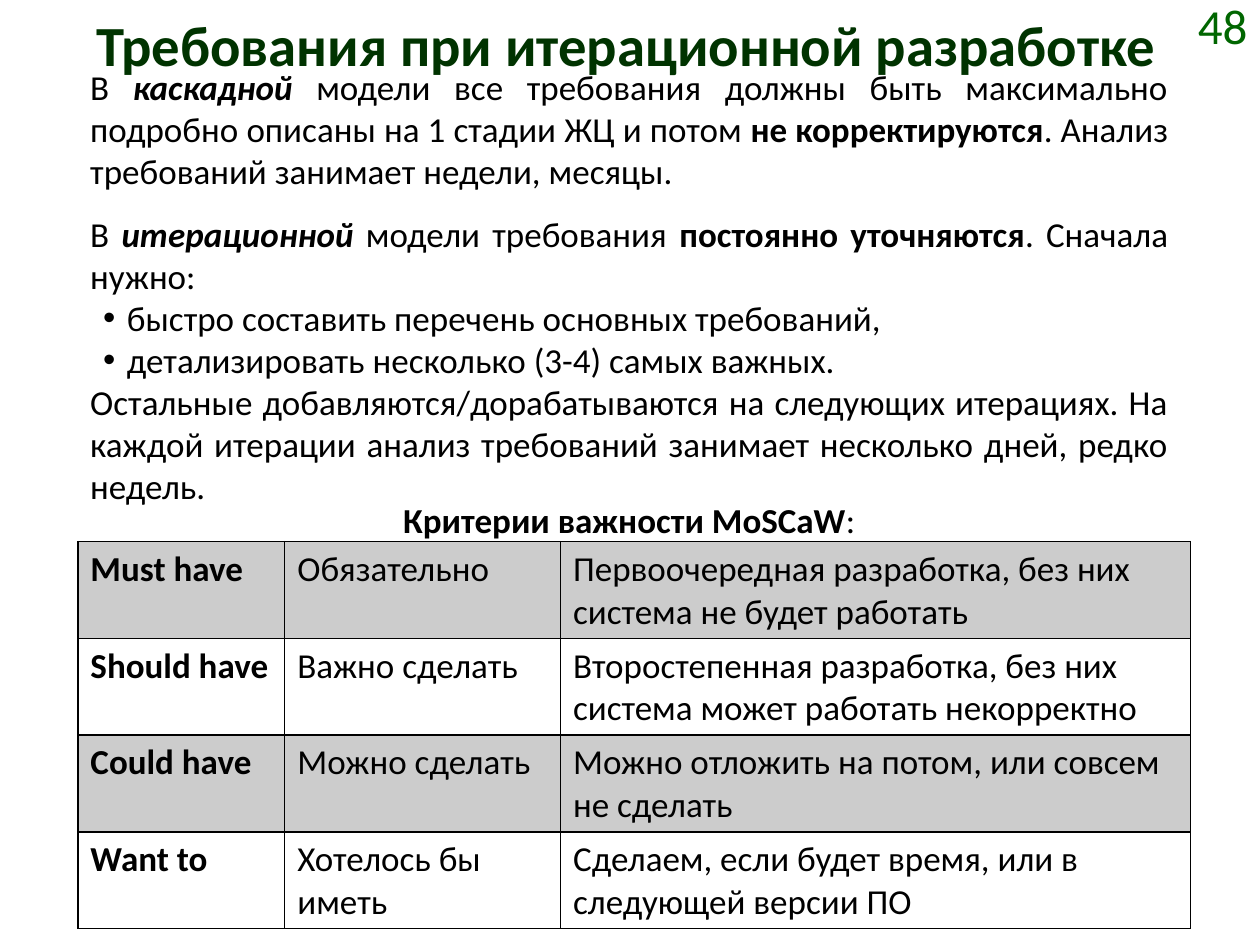
from dataclasses import dataclass

from lxml.etree import SubElement
from pptx import Presentation
from pptx.dml.color import RGBColor as Rgb
from pptx.enum.text import MSO_ANCHOR as Anchor, MSO_AUTO_SIZE as AutoSize, PP_ALIGN as Align
from pptx.oxml.ns import qn
from pptx.util import Cm, Pt


@dataclass(frozen=True)
class Theme:
    font: str = "Calibri"
    ink: Rgb = Rgb(0, 0, 0)
    heading: Rgb = Rgb(0, 0x33, 0)
    number: Rgb = Rgb(0, 0x66, 0)
    heading_size: float = 32.4
    number_size: float = 28
    text_size: float = 20


theme = Theme()
deck = Presentation()
deck.slide_width, deck.slide_height = Cm(25.4), Cm(19.05)
slide = deck.slides.add_slide(deck.slide_layouts[6])


def add_frame(left, top, width, height, **format_values):
    frame = slide.shapes.add_textbox(Cm(left), Cm(top), Cm(width), Cm(height)).text_frame
    for name, value in ({"word_wrap": True} | format_values).items():
        setattr(frame, name, value)
    return frame


def write(paragraph, runs, align, size=theme.text_size, color=theme.ink):
    paragraph.alignment = align
    for text, style in runs:
        run = paragraph.add_run()
        run.text = text
        values = {"name": theme.font, "size": Pt(size), "bold": "b" in style, "italic": "i" in style}
        for name, value in values.items():
            setattr(run.font, name, value)
        run.font.color.rgb = color


heading = add_frame(1.19, 0, 22.86, 2.39, margin_top=Cm(0.2))
write(heading.paragraphs[0], [("Требования при итерационной разработке", "b")],
      Align.CENTER, theme.heading_size, theme.heading)

page_number = add_frame(22.81, 0, 2.59, 0.99, vertical_anchor=Anchor.MIDDLE)
write(page_number.paragraphs[0], [("48", "")], Align.RIGHT, theme.number_size, theme.number)

explanation = [
    ("spaced", [
        ("В ", ""), ("каскадной", "bi"),
        (" модели все требования должны быть максимально подробно описаны на 1 стадии ЖЦ и потом ", ""),
        ("не корректируются", "b"), (". Анализ требований занимает недели, месяцы.", ""),
    ]),
    ("spaced", [
        ("В ", ""), ("итерационной", "bi"), (" модели требования ", ""),
        ("постоянно уточняются", "b"), (". Сначала нужно:", ""),
    ]),
    ("bullet", [("быстро составить перечень основных требований,", "")]),
    ("bullet", [("детализировать несколько (3-4) самых важных.", "")]),
    ("plain", [("Остальные добавляются/дорабатываются на следующих итерациях. На каждой итерации "
                "анализ требований занимает несколько дней, редко недель.", "")]),
]
body = add_frame(1.57, 1.19, 22.23, 9.25, auto_size=AutoSize.SHAPE_TO_FIT_TEXT)
for index, (kind, runs) in enumerate(explanation):
    paragraph = body.add_paragraph() if index else body.paragraphs[0]
    write(paragraph, runs, Align.JUSTIFY)
    paragraph.space_before = Pt(12 if kind == "spaced" else 0)
    if kind == "bullet":
        properties = paragraph._p.get_or_add_pPr()
        properties.set("marL", str(Cm(0.74)))
        properties.set("indent", str(-Cm(0.48)))
        SubElement(properties, qn("a:buFont"), typeface="Arial")
        SubElement(properties, qn("a:buChar"), char="•")

caption = add_frame(1.57, 9.93, 22.23, 1.12, auto_size=AutoSize.SHAPE_TO_FIT_TEXT)
caption.paragraphs[0].space_before = Pt(12)
write(caption.paragraphs[0], [("Критерии важности MoSCaW", "b"), (":", "")], Align.CENTER)

priorities = [
    ("Must have", "Обязательно", "Первоочередная разработка, без них система не будет работать"),
    ("Should have", "Важно сделать", "Второстепенная разработка, без них система может работать некорректно"),
    ("Could have", "Можно сделать", "Можно отложить на потом, или совсем не сделать"),
    ("Want to", "Хотелось бы иметь", "Сделаем, если будет время, или в следующей версии ПО"),
]
column_widths = [4.17, 5.56, 12.7]
row_height = 1.95
criteria = slide.shapes.add_table(
    len(priorities), len(column_widths), Cm(1.57), Cm(10.92),
    Cm(sum(column_widths)), Cm(row_height * len(priorities))).table
criteria.first_row = criteria.horz_banding = False
for column, width in zip(criteria.columns, column_widths):
    column.width = Cm(width)

for row_index, texts in enumerate(priorities):
    criteria.rows[row_index].height = Cm(row_height)
    for column_index, text in enumerate(texts):
        cell = criteria.cell(row_index, column_index)
        write(cell.text_frame.paragraphs[0], [(text, "" if column_index else "b")], Align.LEFT)
        cell_properties = cell._tc.get_or_add_tcPr()
        for side in ("lnL", "lnR", "lnT", "lnB"):
            border = SubElement(cell_properties, qn(f"a:{side}"), w=str(Pt(1)))
            border_fill = SubElement(border, qn("a:solidFill"))
            SubElement(border_fill, qn("a:srgbClr"), val=str(theme.ink))
        if row_index % 2:
            SubElement(cell_properties, qn("a:noFill"))
        else:
            shade = SubElement(cell_properties, qn("a:solidFill"))
            shade_color = SubElement(shade, qn("a:srgbClr"), val=str(theme.ink))
            SubElement(shade_color, qn("a:alpha"), val="20000")

deck.save("out.pptx")
